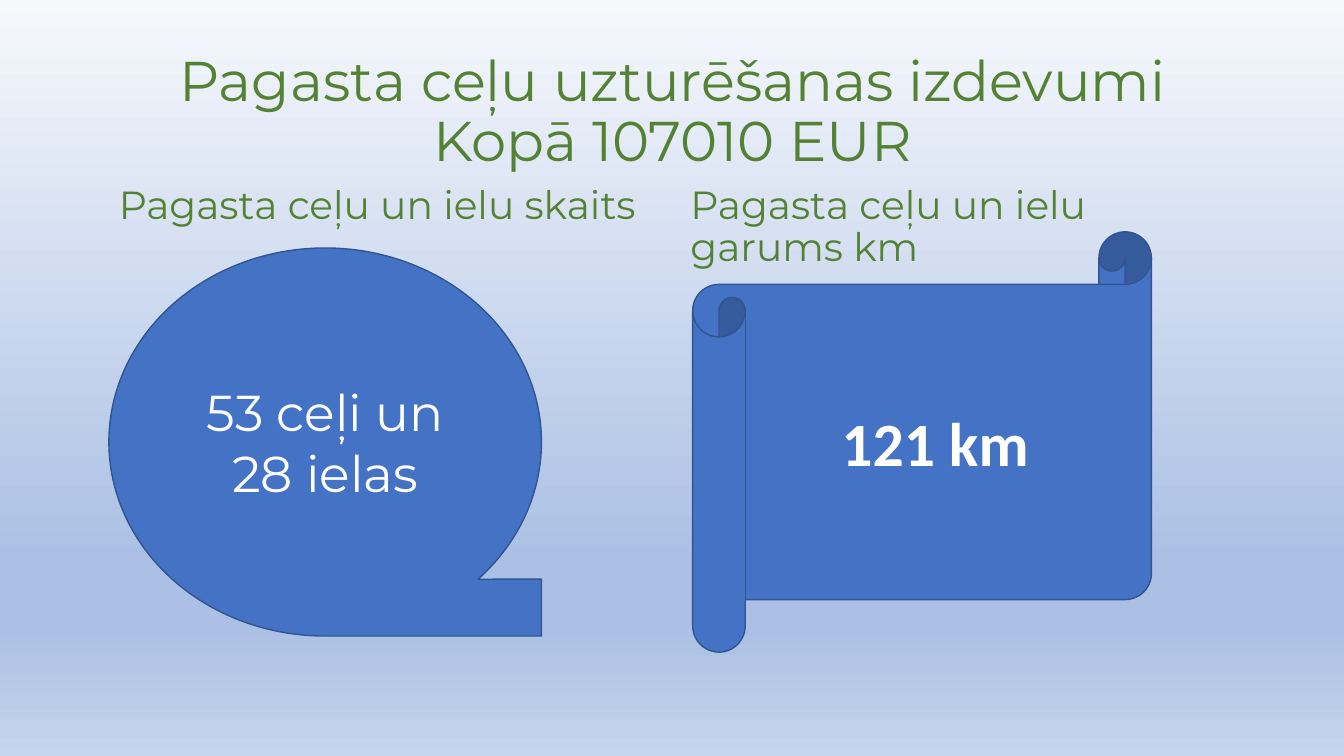
from dataclasses import dataclass

from lxml.etree import SubElement
from pptx import Presentation
from pptx.dml.color import RGBColor
from pptx.enum.shapes import MSO_SHAPE as Shape
from pptx.enum.text import MSO_ANCHOR as Anchor, PP_ALIGN as Align
from pptx.oxml.ns import qn
from pptx.slide import Slide
from pptx.text.text import TextFrame
from pptx.util import Inches, Pt

Box = tuple[float, float, float, float]


@dataclass(frozen=True)
class Theme:
    green: str = "548235"
    blue: str = "4472C4"
    edge: str = "325491"
    white: str = "FFFFFF"
    sky: tuple = ((0, "F6F8FC"), (74, "ABC0E4"), (83, "ABC0E4"), (100, "C7D5ED"))
    font: str = "Montserrat"
    plain: str = "Calibri"
    title: int = 40
    label: int = 28
    count: int = 36
    length: int = 44


@dataclass(frozen=True)
class Label:
    text: str
    box: Box


@dataclass(frozen=True)
class Badge:
    text: str
    box: Box
    kind: Shape
    size: int
    font: str
    bold: bool = False


THEME = Theme()

LABELS = [
    Label("Pagasta ceļu un ielu skaits", (1.08, 1.79, 5.67, 4.76)),
    Label("Pagasta ceļu un ielu garums km", (6.75, 1.79, 5.67, 4.96)),
]

BADGES = [
    Badge("53 ceļi un 28 ielas", (1.08, 2.46, 4.29, 3.85),
          Shape.FLOWCHART_SEQUENTIAL_ACCESS_STORAGE, THEME.count, THEME.font),
    Badge("121 km", (6.87, 2.3, 4.55, 4.17),
          Shape.HORIZONTAL_SCROLL, THEME.length, THEME.plain, True),
]


def write(frame: TextFrame, text: str, *, size: int, color: str,
          font: str = THEME.font, bold: bool = False, align: Align = Align.CENTER,
          anchor: Anchor = Anchor.MIDDLE, space: float = 1.0, before: int = 0) -> None:
    frame.word_wrap = True
    frame.vertical_anchor = anchor
    par = frame.paragraphs[0]
    par.alignment = align
    par.line_spacing = space
    par.space_before = Pt(before)
    run = par.add_run()
    run.text = text
    run.font.name = font
    run.font.size = Pt(size)
    run.font.bold = bold
    run.font.color.rgb = RGBColor.from_string(color)


def paint(slide: Slide) -> None:
    fill = slide.background.fill
    fill.gradient()
    fill.gradient_angle = 270
    stops = slide.element.find(".//" + qn("a:gsLst"))
    for old in list(stops):
        stops.remove(old)
    for pos, color in THEME.sky:
        stop = SubElement(stops, qn("a:gs"), pos=str(pos * 1000))
        SubElement(stop, qn("a:srgbClr"), val=color)


def head(slide: Slide, text: str, box: Box) -> None:
    title = slide.shapes.title
    title.left, title.top, title.width, title.height = map(Inches, box)
    write(title.text_frame, text, size=THEME.title, color=THEME.green, space=0.9)


def add_label(slide: Slide, label: Label) -> None:
    area = slide.shapes.add_textbox(*map(Inches, label.box))
    write(area.text_frame, label.text, size=THEME.label, color=THEME.green,
          align=Align.LEFT, anchor=Anchor.TOP, space=0.9, before=10)


def add_badge(slide: Slide, badge: Badge) -> None:
    shape = slide.shapes.add_shape(badge.kind, *map(Inches, badge.box))
    shape.shadow.inherit = False
    shape.fill.solid()
    shape.fill.fore_color.rgb = RGBColor.from_string(THEME.blue)
    shape.line.color.rgb = RGBColor.from_string(THEME.edge)
    shape.line.width = Pt(1)
    write(shape.text_frame, badge.text, size=badge.size, color=THEME.white,
          font=badge.font, bold=badge.bold)


def main() -> None:
    deck = Presentation()
    deck.slide_width, deck.slide_height = Inches(13.33), Inches(7.5)
    slide = deck.slides.add_slide(deck.slide_layouts[5])

    # Background and title
    paint(slide)
    head(slide, "Pagasta ceļu uzturēšanas izdevumi Kopā 107010 EUR",
         (0.92, 0.4, 11.5, 1.45))

    # Captions, then the figures below them
    for label in LABELS:
        add_label(slide, label)
    for badge in BADGES:
        add_badge(slide, badge)

    deck.save("out.pptx")


if __name__ == "__main__":
    main()
